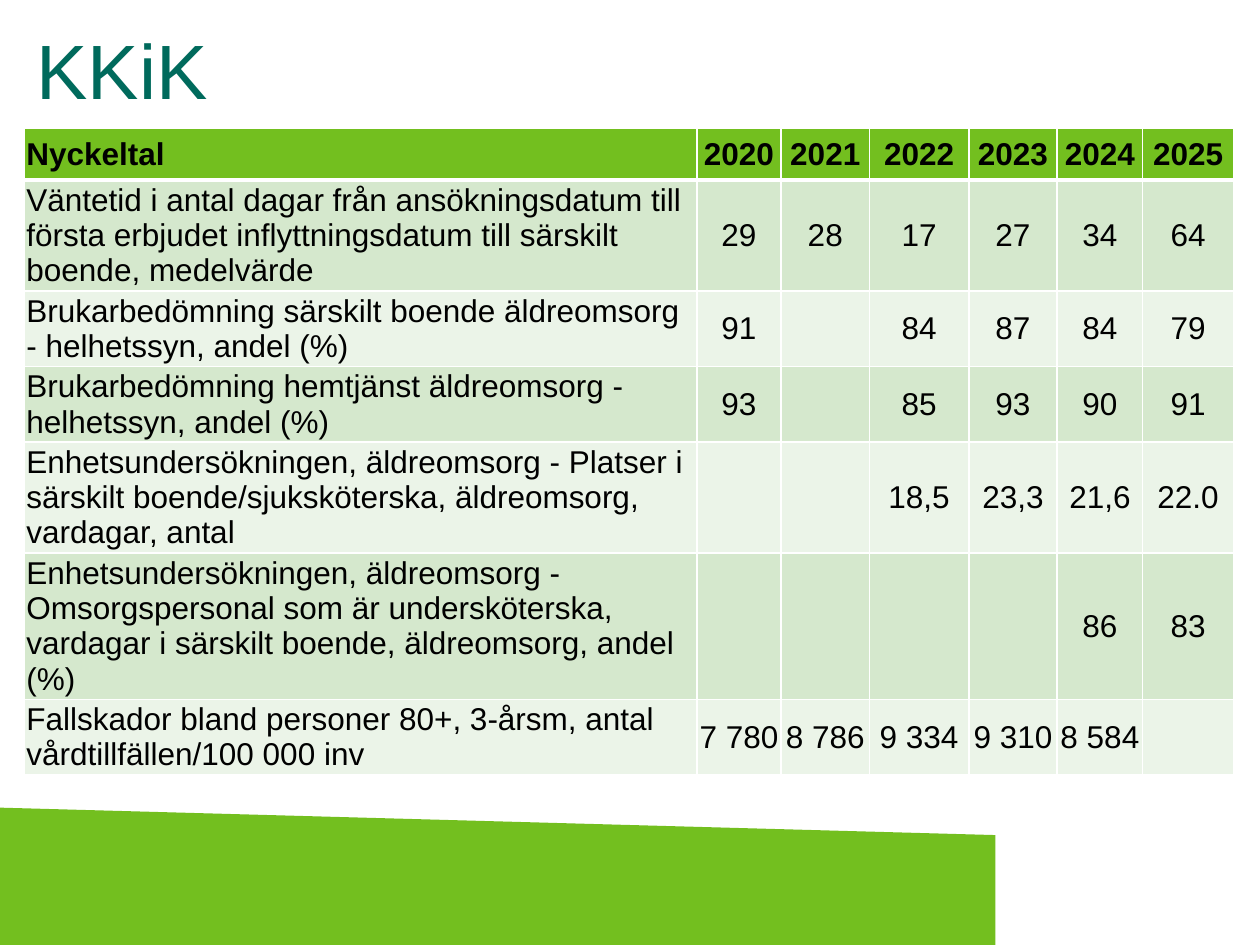
import pptx
import pptx.dml.color
import pptx.enum.shapes
import pptx.enum.text
import pptx.oxml
import pptx.oxml.ns
import pptx.util

COLORS = {"green": "73BF1F", "teal": "006A5C", "dark_band": "D5E8CD",
          "light_band": "EBF4E8", "text": "000000", "border": "FFFFFF"}
FONT = "Arial"
SLIDE_WIDTH, SLIDE_HEIGHT = 10, 7.5

COLUMN_WIDTHS = [5.34, 0.67, 0.7, 0.79, 0.7, 0.68, 0.72]
HEADER_HEIGHT = 0.41
LINE_HEIGHT, CELL_MARGIN = 0.28, 0.02
YEARS = ["Nyckeltal", "2020", "2021", "2022", "2023", "2024", "2025"]
# Each measure: number of text lines, then its name and yearly values
MEASURES = [
    (3, ["Väntetid i antal dagar från ansökningsdatum till första erbjudet "
         "inflyttningsdatum till särskilt boende, medelvärde",
         "29", "28", "17", "27", "34", "64"]),
    (2, ["Brukarbedömning särskilt boende äldreomsorg - helhetssyn, andel (%)",
         "91", "", "84", "87", "84", "79"]),
    (2, ["Brukarbedömning hemtjänst äldreomsorg - helhetssyn, andel (%)",
         "93", "", "85", "93", "90", "91"]),
    (3, ["Enhetsundersökningen, äldreomsorg - Platser i särskilt "
         "boende/sjuksköterska, äldreomsorg, vardagar, antal",
         "", "", "18,5", "23,3", "21,6", "22.0"]),
    (4, ["Enhetsundersökningen, äldreomsorg - Omsorgspersonal som är "
         "undersköterska, vardagar i särskilt boende, äldreomsorg, andel (%)",
         "", "", "", "", "86", "83"]),
    (2, ["Fallskador bland personer 80+, 3-årsm, antal vårdtillfällen/100 000 inv",
         "7 780", "8 786", "9 334", "9 310", "8 584", ""]),
]


def rgb(name):
    return pptx.dml.color.RGBColor.from_string(COLORS[name])


def inches(*lengths):
    return [pptx.util.Inches(length) for length in lengths]


def style_font(font, size, color, bold=False):
    font.name, font.size, font.bold = FONT, pptx.util.Pt(size), bold
    font.color.rgb = rgb(color)


def add_footer_band(slide, box):
    band = slide.shapes.add_shape(
        pptx.enum.shapes.MSO_SHAPE.FLOWCHART_MANUAL_INPUT, *inches(*box))
    band.shadow.inherit = False
    band.fill.solid()
    band.fill.fore_color.rgb = rgb("green")
    band.line.fill.background()
    band._element.spPr.xfrm.set("flipH", "1")


def fill_title(slide, box, wording):
    title = slide.shapes.title
    title.left, title.top, title.width, title.height = inches(*box)
    title.text_frame.vertical_anchor = pptx.enum.text.MSO_ANCHOR.MIDDLE
    heading = title.text_frame.paragraphs[0]
    heading.alignment = pptx.enum.text.PP_ALIGN.LEFT
    heading.line_spacing = 0.9
    run = heading.add_run()
    run.text = wording
    style_font(run.font, 44, "teal")


def add_borders(cell, bottom_width):
    """Put the four border lines before the fill, as the schema requires."""
    properties = cell._tc.get_or_add_tcPr()
    widths = {"lnL": 1, "lnR": 1, "lnT": 1, "lnB": bottom_width}
    for position, (side, width) in enumerate(widths.items()):
        properties.insert(position, pptx.oxml.parse_xml(
            f'<a:{side} {pptx.oxml.ns.nsdecls("a")} w="{pptx.util.Pt(width)}">'
            f'<a:solidFill><a:srgbClr val="{COLORS["border"]}"/></a:solidFill>'
            f'</a:{side}>'))


def fill_cell(cell, wording, fill, centred, header):
    cell.margin_left = cell.margin_right = pptx.util.Inches(CELL_MARGIN)
    cell.margin_top = cell.margin_bottom = pptx.util.Inches(CELL_MARGIN)
    cell.vertical_anchor = pptx.enum.text.MSO_ANCHOR.MIDDLE
    cell.fill.solid()
    cell.fill.fore_color.rgb = rgb(fill)
    add_borders(cell, 3 if header else 1)
    if wording:
        paragraph = cell.text_frame.paragraphs[0]
        if centred:
            paragraph.alignment = pptx.enum.text.PP_ALIGN.CENTER
        run = paragraph.add_run()
        run.text = wording
        style_font(run.font, 18, "text", bold=header)


def add_measures_table(slide, left, top):
    rows = [YEARS] + [row for _, row in MEASURES]
    heights = [HEADER_HEIGHT] + [
        lines * LINE_HEIGHT + 2 * CELL_MARGIN for lines, _ in MEASURES]
    table = slide.shapes.add_table(
        len(rows), len(YEARS),
        *inches(left, top, sum(COLUMN_WIDTHS), sum(heights))).table
    for column, width in zip(table.columns, COLUMN_WIDTHS):
        column.width = pptx.util.Inches(width)
    for r, (row, height) in enumerate(zip(rows, heights)):
        table.rows[r].height = pptx.util.Inches(height)
        fill = "green" if r == 0 else "dark_band" if r % 2 else "light_band"
        for c, wording in enumerate(row):
            fill_cell(table.cell(r, c), wording, fill, c > 0, r == 0)


def main():
    deck = pptx.Presentation()
    deck.slide_width, deck.slide_height = inches(SLIDE_WIDTH, SLIDE_HEIGHT)
    slide = deck.slides.add_slide(deck.slide_layouts.get_by_name("Title Only"))
    band_height = 1.09
    add_footer_band(slide, (0, SLIDE_HEIGHT - band_height,
                            0.79 * SLIDE_WIDTH, band_height))
    fill_title(slide, (0.19, 0.07, 8.62, 1.04), "KKiK")
    add_measures_table(slide, 0.19, 1.02)
    deck.save("out.pptx")


if __name__ == "__main__":
    main()
